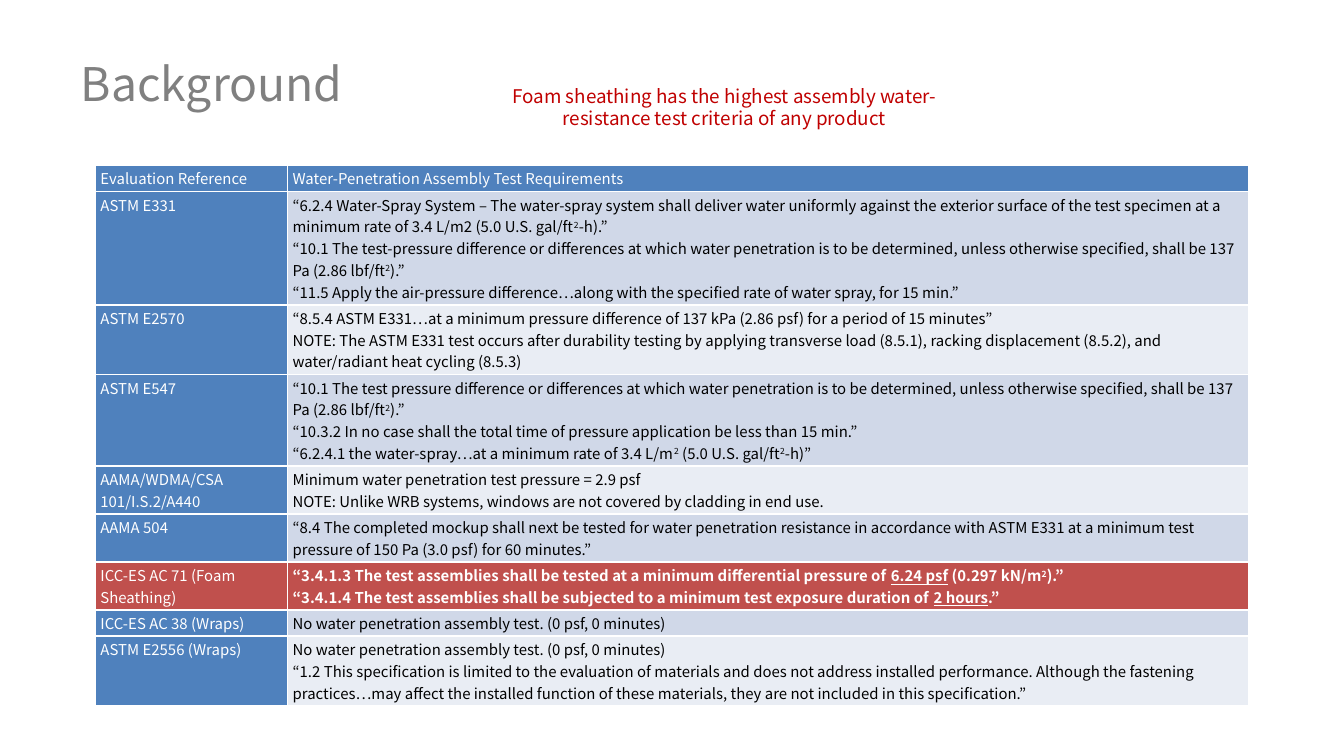
from pptx import Presentation
from pptx.dml.color import RGBColor
from pptx.enum.text import MSO_ANCHOR, MSO_AUTO_SIZE, PP_ALIGN
from pptx.util import Inches, Pt

LEFT, CENTER = PP_ALIGN.LEFT, PP_ALIGN.CENTER
MIDDLE = MSO_ANCHOR.MIDDLE
NO_AUTOFIT, FIT_SHAPE = MSO_AUTO_SIZE.NONE, MSO_AUTO_SIZE.SHAPE_TO_FIT_TEXT
TITLE_ONLY = 5

FONT = "Noto Sans CJK JP"
COLORS = {
    "title": "808080",
    "callout": "C00000",
    "header": "4F81BD",
    "highlight": "C0504D",
    "band_dark": "D0D8E8",
    "band_light": "E9EDF4",
    "white": "FFFFFF",
    "black": "000000",
}

HEADINGS = ("Evaluation Reference", "Water-Penetration Assembly Test Requirements")
HIGHLIGHTED = "ICC-ES AC 71 (Foam Sheathing)"
NO_TEST = "No water penetration assembly test. (0 psf, 0 minutes)"
# In the requirements, ^...^ marks superscript and _..._ marks underline.
REQUIREMENTS = [
    ("ASTM E331", [
        "“6.2.4 Water-Spray System – The water-spray system shall deliver water uniformly against "
        "the exterior surface of the test specimen at a minimum rate of 3.4 L/m2 "
        "(5.0 U.S. gal/ft^2^-h).”",
        "“10.1 The test-pressure difference or differences at which water penetration is to be "
        "determined, unless otherwise specified, shall be 137 Pa (2.86 lbf/ft^2^).”",
        "“11.5 Apply the air-pressure difference…along with the specified rate of water spray, "
        "for 15 min.”",
    ]),
    ("ASTM E2570", [
        "“8.5.4 ASTM E331…at a minimum pressure difference of 137 kPa (2.86 psf) for a period "
        "of 15 minutes”",
        "NOTE: The ASTM E331 test occurs after durability testing by applying transverse load "
        "(8.5.1), racking displacement (8.5.2), and water/radiant heat cycling (8.5.3)",
    ]),
    ("ASTM E547", [
        "“10.1 The test pressure difference or differences at which water penetration is to be "
        "determined, unless otherwise specified, shall be 137 Pa (2.86 lbf/ft^2^).”",
        "“10.3.2 In no case shall the total time of pressure application be less than 15 min.”",
        "“6.2.4.1 the water-spray…at a minimum rate of 3.4 L/m^2^ (5.0 U.S. gal/ft^2^-h)”",
    ]),
    ("AAMA/WDMA/CSA 101/I.S.2/A440", [
        "Minimum water penetration test pressure = 2.9 psf",
        "NOTE: Unlike WRB systems, windows are not covered by cladding in end use.",
    ]),
    ("AAMA 504", [
        "“8.4 The completed mockup shall next be tested for water penetration resistance in "
        "accordance with ASTM E331 at a minimum test pressure of 150 Pa (3.0 psf) for 60 minutes.”",
    ]),
    (HIGHLIGHTED, [
        "“3.4.1.3 The test assemblies shall be tested at a minimum differential pressure of "
        "_6.24 psf_ (0.297 kN/m^2^).”",
        "“3.4.1.4 The test assemblies shall be subjected to a minimum test exposure duration of "
        "_2 hours_.”",
    ]),
    ("ICC-ES AC 38 (Wraps)", [NO_TEST]),
    ("ASTM E2556 (Wraps)", [
        NO_TEST,
        "“1.2 This specification is limited to the evaluation of materials and does not address "
        "installed performance. Although the fastening practices…may affect the installed function "
        "of these materials, they are not included in this specification.”",
    ]),
]
COLUMN_WIDTHS = (1.43, 7.15)
# Minimum heights; rows grow to fit their text.
ROW_HEIGHTS = (0.08, 0.32, 0.2, 0.26, 0.14, 0.14, 0.14, 0.13, 0.2)


class SlideBuilder:
    """Holds the text style and the slide being filled."""

    def __init__(self, slide):
        self.slide = slide

    def color(self, name):
        return RGBColor.from_string(COLORS[name])

    def style(self, paragraph, size, color, bold=False, alignment=LEFT):
        paragraph.alignment = alignment
        font = paragraph.font
        font.name, font.size, font.bold = FONT, Pt(size), bold
        font.color.rgb = self.color(color)

    def title(self, text, left, top, width, height):
        shape = self.slide.shapes.title
        shape.left, shape.top = Inches(left), Inches(top)
        shape.width, shape.height = Inches(width), Inches(height)
        frame = shape.text_frame
        frame.text = text
        frame.auto_size, frame.vertical_anchor = NO_AUTOFIT, MIDDLE
        self.style(frame.paragraphs[0], 24.8, "title")

    def callout(self, text, left, top, width, height):
        shape = self.slide.shapes.add_textbox(
            Inches(left), Inches(top), Inches(width), Inches(height))
        frame = shape.text_frame
        frame.word_wrap, frame.auto_size = True, FIT_SHAPE
        paragraph = frame.paragraphs[0]
        paragraph.text = text
        self.style(paragraph, 10.1, "callout", alignment=CENTER)

    def marked_runs(self, paragraph, text):
        """Add runs, reading ^...^ as superscript and _..._ as underline."""
        for i, section in enumerate(text.split("_")):
            for j, piece in enumerate(section.split("^")):
                if not piece:
                    continue
                run = paragraph.add_run()
                run.text = piece
                if i % 2:
                    run.font.underline = True
                if j % 2:
                    run._r.get_or_add_rPr().set("baseline", "30000")

    def cell(self, cell, lines, fill, color, bold=False):
        cell.margin_left = cell.margin_right = Pt(2.7)
        cell.margin_top = cell.margin_bottom = Pt(1.2)
        cell.fill.solid()
        cell.fill.fore_color.rgb = self.color(fill)
        frame = cell.text_frame
        for index, line in enumerate(lines):
            paragraph = frame.add_paragraph() if index else frame.paragraphs[0]
            self.marked_runs(paragraph, line)
            self.style(paragraph, 8, color, bold)

    def requirements_table(self, left, top, width, height):
        """Add the table; its white rules come from the default table style."""
        shape = self.slide.shapes.add_table(
            len(REQUIREMENTS) + 1, len(HEADINGS),
            Inches(left), Inches(top), Inches(width), Inches(height))
        table = shape.table
        for column, column_width in zip(table.columns, COLUMN_WIDTHS):
            column.width = Inches(column_width)
        for row, row_height in zip(table.rows, ROW_HEIGHTS):
            row.height = Inches(row_height)
        shape.height = Inches(height)

        for column, heading in enumerate(HEADINGS):
            self.cell(table.cell(0, column), [heading], "header", "white")
        for row, (reference, lines) in enumerate(REQUIREMENTS, start=1):
            highlighted = reference == HIGHLIGHTED
            band = "band_dark" if row % 2 else "band_light"
            reference_fill = "highlight" if highlighted else "header"
            self.cell(table.cell(row, 0), [reference], reference_fill, "white")
            self.cell(table.cell(row, 1), lines,
                      "highlight" if highlighted else band,
                      "white" if highlighted else "black", bold=highlighted)


def main():
    presentation = Presentation()
    presentation.slide_width = Inches(10)
    presentation.slide_height = Inches(10 * 9 / 16)
    slide = presentation.slides.add_slide(presentation.slide_layouts[TITLE_ONLY])
    builder = SlideBuilder(slide)
    builder.title("Background", 0.5, 0.17, 9, 0.9)
    builder.requirements_table(0.71, 1.23, sum(COLUMN_WIDTHS), 3.34)
    builder.callout(
        "Foam sheathing has the highest assembly water-resistance test criteria of any product",
        3.58, 0.58, 3.62, 0.44)
    presentation.save("out.pptx")


if __name__ == "__main__":
    main()
